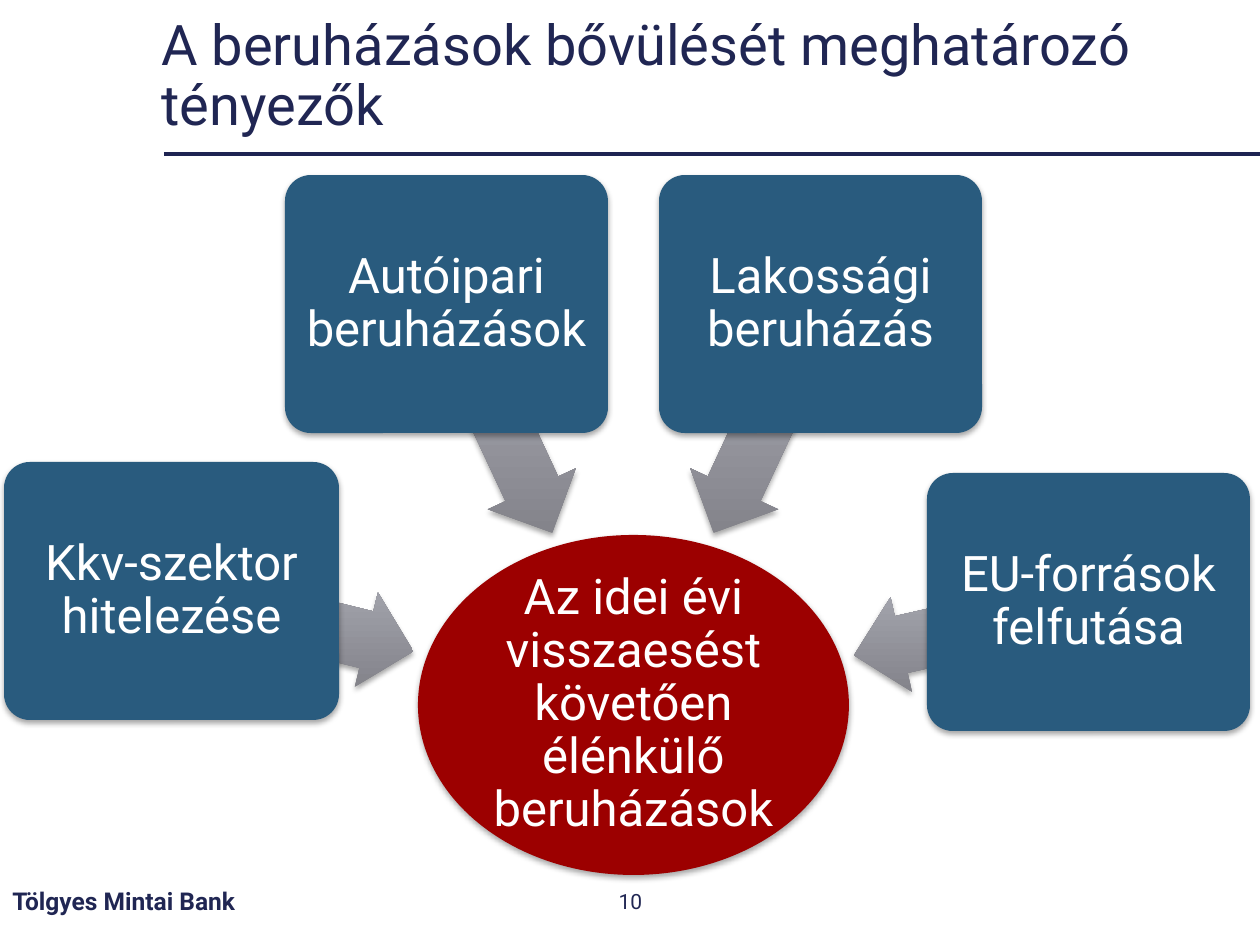
from lxml.etree import SubElement
from pptx import Presentation
from pptx.dml.color import RGBColor
from pptx.enum.shapes import MSO_CONNECTOR, MSO_SHAPE
from pptx.enum.text import MSO_ANCHOR, PP_ALIGN
from pptx.oxml.ns import qn
from pptx.util import Emu, Pt

EMU_PER_PX = 914400 / 126
FONT = "Roboto"
COLORS = {
    "navy": "202653",
    "rule": "1E2452",
    "factor": "295B7E",
    "outcome": "9C0000",
    "arrow_dark": "808087",
    "arrow_light": "A6A7B0",
    "white": "FFFFFF",
    "shadow": "000000",
}
FACTOR_HEIGHT = 258
ARROW_HEIGHT = 97
# text, box (left, top, width), arrow (left, top, width, rotation)
FACTORS = [
    ("Kkv-szektor hitelezése", (4, 462, 335), (168, 573, 249, 193.8)),
    ("Autóipari beruházások", (285, 175, 323), (373, 370, 252, 245)),
    ("Lakossági beruházás", (659, 175, 323), (641, 370, 252, 295)),
    ("EU-források felfutása", (927, 473, 323), (851, 580, 242, 347.2)),
]


def px(*lengths):
    return [Emu(round(length * EMU_PER_PX)) for length in lengths]


def rgb(name):
    return RGBColor.from_string(COLORS[name])


def write(shape, text, size, color, align=PP_ALIGN.LEFT, bold=False, spacing=None, inset=None):
    """Put one paragraph, vertically centred, into a shape."""
    frame = shape.text_frame
    frame_format = {"word_wrap": True, "vertical_anchor": MSO_ANCHOR.MIDDLE}
    if inset is not None:
        for side in ("left", "top", "right", "bottom"):
            frame_format[f"margin_{side}"] = px(inset)[0]
    paragraph = frame.paragraphs[0]
    run = paragraph.add_run()
    run.text = text
    run.font.color.rgb = rgb(color)
    formats = [
        (frame, frame_format),
        (paragraph, {"alignment": align, "line_spacing": spacing}),
        (run.font, {"name": FONT, "size": Pt(size), "bold": bold}),
    ]
    for target, values in formats:
        for attribute, value in values.items():
            setattr(target, attribute, value)


def add_label(slide, box, text, size, **text_format):
    label = slide.shapes.add_textbox(*px(*box))
    write(label, text, size, "navy", **text_format)


def add_shadow(shape):
    """Cast a soft shadow straight down."""
    shape.shadow.inherit = False
    effects = shape._element.spPr.find(qn("a:effectLst"))
    shadow = SubElement(effects, qn("a:outerShdw"), blurRad="40000", dist="23000",
                        dir="5400000", rotWithShape="0")
    color = SubElement(shadow, qn("a:srgbClr"), val=COLORS["shadow"])
    SubElement(color, qn("a:alpha"), val="35000")


def add_node(slide, kind, box, text, color, inset):
    node = slide.shapes.add_shape(kind, *px(*box))
    node.fill.solid()
    node.fill.fore_color.rgb = rgb(color)
    node.line.fill.background()
    add_shadow(node)
    write(node, text, 28, "white", align=PP_ALIGN.CENTER, spacing=0.9, inset=inset)
    return node


def add_arrow(slide, left, top, width, rotation):
    arrow = slide.shapes.add_shape(MSO_SHAPE.LEFT_ARROW, *px(left, top, width, ARROW_HEIGHT))
    arrow.rotation = rotation
    arrow.adjustments[0] = 0.6
    arrow.adjustments[1] = 0.5
    arrow.line.fill.background()
    arrow.fill.gradient()
    arrow.fill.gradient_angle = 90
    stops = [("arrow_dark", 0), ("arrow_light", 0.8)]
    for stop, (color, position) in zip(arrow.fill.gradient_stops, stops):
        stop.color.rgb = rgb(color)
        stop.position = position
    # Light stays on top however the arrow is turned
    arrow._element.spPr.find(qn("a:gradFill")).set("rotWithShape", "0")
    add_shadow(arrow)


def add_rule(slide, left, right, y):
    rule = slide.shapes.add_connector(MSO_CONNECTOR.STRAIGHT, *px(left, y, right, y))
    rule.line.color.rgb = rgb("rule")
    rule.line.width = Pt(2.25)
    SubElement(rule._element.spPr, qn("a:effectLst"))


def main():
    deck = Presentation()
    deck.slide_width, deck.slide_height = px(1260, 945)
    slide = deck.slides.add_slide(deck.slide_layouts[6])

    add_rule(slide, 164, 1260, 154)
    add_label(slide, (149, 25, 1032, 105), "A beruházások bővülését meghatározó tényezők",
              32, spacing=0.9)
    add_label(slide, (0, 876, 426, 50), "Tölgyes Mintai Bank", 14, bold=True)
    add_label(slide, (489, 876, 283, 50), "10", 12, align=PP_ALIGN.CENTER)

    add_node(slide, MSO_SHAPE.OVAL, (418, 535, 431, 340),
             "Az idei évi visszaesést követően élénkülő beruházások", "outcome", inset=3)
    for text, box, arrow in FACTORS:
        add_arrow(slide, *arrow)
        factor = add_node(slide, MSO_SHAPE.ROUNDED_RECTANGLE, (*box, FACTOR_HEIGHT),
                          text, "factor", inset=8)
        factor.adjustments[0] = 0.1

    deck.save("out.pptx")


if __name__ == "__main__":
    main()
